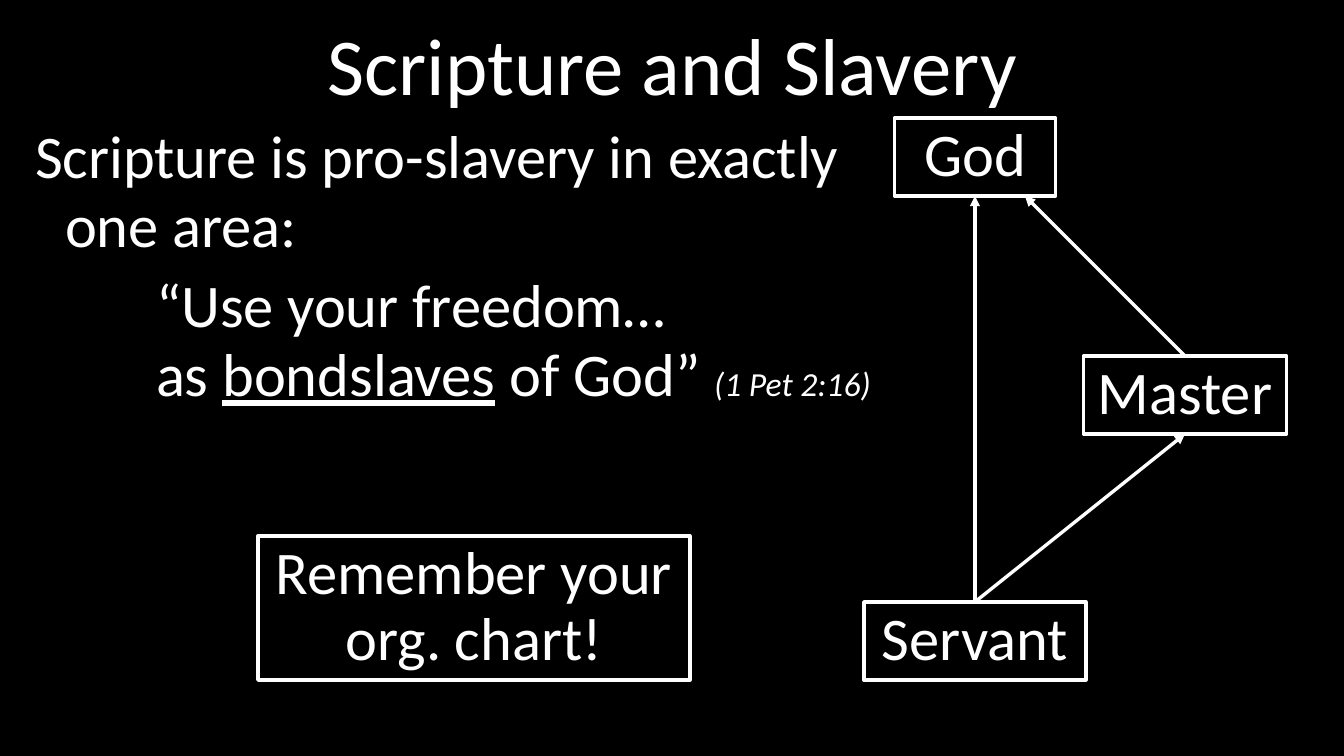
from lxml.etree import SubElement
from pptx import Presentation
from pptx.dml.color import RGBColor
from pptx.enum.shapes import MSO_CONNECTOR, MSO_SHAPE
from pptx.enum.text import MSO_ANCHOR as ANCHOR, PP_ALIGN as ALIGN
from pptx.oxml.ns import qn
from pptx.util import Pt

PX = 914400 // 121
WHITE, BLACK = "FFFFFF", "000000"


def px(length):
    return round(length * PX)


def color(hex_value):
    return RGBColor.from_string(hex_value)


def add_text(paragraph, text, size=36, italic=False, underline=False):
    run = paragraph.add_run()
    run.text = text
    font = run.font
    font.name, font.size = "Calibri", Pt(size)
    font.italic, font.underline = italic, underline
    font.color.rgb = color(WHITE)


def set_frame(frame, anchor):
    frame.word_wrap = True
    frame.vertical_anchor = anchor
    frame.margin_left = frame.margin_right = px(12)
    frame.margin_top = frame.margin_bottom = px(6)


def add_frame(slide, box, anchor=ANCHOR.TOP):
    frame = slide.shapes.add_textbox(*map(px, box)).text_frame
    set_frame(frame, anchor)
    return frame


def set_paragraph(paragraph, left, indent):
    paragraph.line_spacing = 0.95
    paragraph.space_before = Pt(7)
    properties = paragraph._p.get_or_add_pPr()
    properties.set("marL", str(px(left)))
    properties.set("indent", str(px(indent)))


def add_title(slide, box):
    heading = add_frame(slide, box, ANCHOR.MIDDLE).paragraphs[0]
    heading.alignment = ALIGN.CENTER
    add_text(heading, "Scripture and Slavery", size=48)


def add_body(slide, box):
    frame = add_frame(slide, box)
    frame.margin_right = 0
    claim = frame.paragraphs[0]
    set_paragraph(claim, left=30, indent=-30)
    add_text(claim, "Scripture is pro-slavery in exactly one area:")

    quote = frame.add_paragraph()
    set_paragraph(quote, left=121, indent=0)
    add_text(quote, "“Use your freedom…")
    quote.add_line_break()
    add_text(quote, "as ")
    add_text(quote, "bondslaves", underline=True)
    add_text(quote, " of God” ")
    add_text(quote, "(1 Pet 2:16)", size=20, italic=True)


def add_label_box(slide, box, text):
    label = slide.shapes.add_shape(MSO_SHAPE.ROUNDED_RECTANGLE, *map(px, box))
    label.adjustments[0] = 0
    label.shadow.inherit = False
    label.fill.solid()
    label.fill.fore_color.rgb = color(BLACK)
    label.line.color.rgb = color(WHITE)
    label.line.width = Pt(2)
    set_frame(label.text_frame, ANCHOR.MIDDLE)
    paragraph = label.text_frame.paragraphs[0]
    paragraph.alignment = ALIGN.CENTER
    paragraph.line_spacing = 0.9
    add_text(paragraph, text)


def add_arrow(slide, start, end):
    arrow = slide.shapes.add_connector(
        MSO_CONNECTOR.STRAIGHT, *map(px, (*start, *end)))
    arrow.line.color.rgb = color(WHITE)
    arrow.line.width = Pt(2)
    SubElement(arrow.line._get_or_add_ln(), qn("a:tailEnd"), type="triangle")
    SubElement(arrow._element.spPr, qn("a:effectLst"))


def add_org_chart(slide, box):
    left, top, width, height = box
    node_height = 78
    center = left + 112
    master_center = left + width - 102
    master_top = top + 238
    servant_top = top + height - node_height
    god_bottom = top + node_height

    # People
    for text, middle, node_top, node_width in (
            ("Servant", center, servant_top, 222),
            ("Master", master_center, master_top, 203),
            ("God", center, top, 161)):
        node = (middle - node_width / 2, node_top, node_width, node_height)
        add_label_box(slide, node, text)

    # Lines of authority
    servant = (center, servant_top)
    add_arrow(slide, servant, (master_center, master_top + node_height))
    add_arrow(slide, servant, (center, god_bottom))
    add_arrow(slide, (master_center, master_top), (center + 50, god_bottom))


def main():
    deck = Presentation()
    deck.slide_width, deck.slide_height = px(1344), px(756)
    slide = deck.slides.add_slide(deck.slide_layouts[6])
    slide.background.fill.solid()
    slide.background.fill.fore_color.rgb = color(BLACK)

    add_title(slide, (23, 17, 1299, 92))
    add_body(slide, (23, 117, 860, 613))
    add_org_chart(slide, (863, 118, 424, 562))
    add_label_box(slide, (258, 536, 432, 144), "Remember your org. chart!")

    deck.save("out.pptx")


if __name__ == "__main__":
    main()
